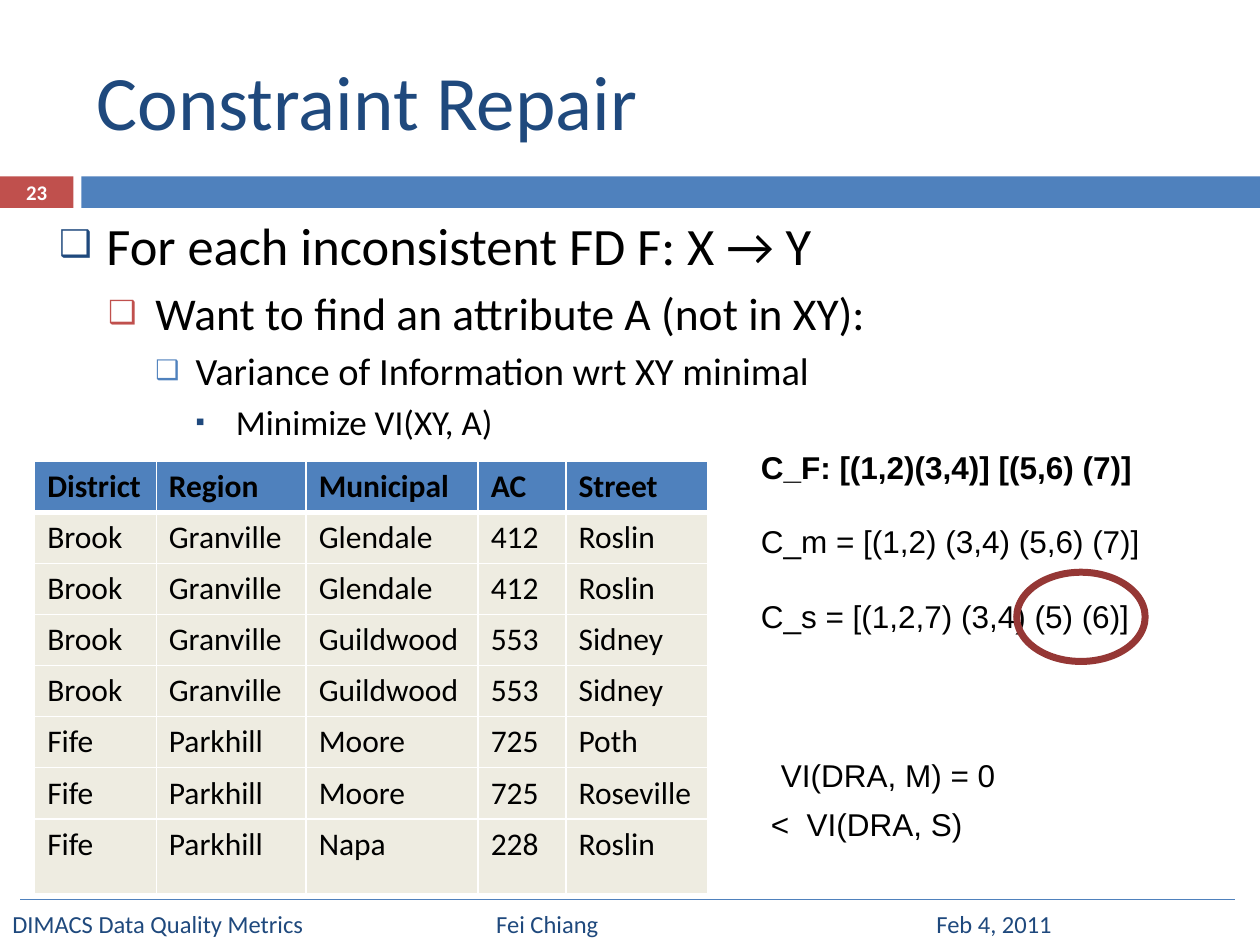
"""Build the Constraint Repair slide."""
import pptx
import pptx.dml.color
import pptx.enum.shapes
import pptx.enum.text
import pptx.oxml
import pptx.oxml.ns
import pptx.util
from lxml import etree

Pt = pptx.util.Pt
SHAPE = pptx.enum.shapes.MSO_SHAPE
ANCHOR = pptx.enum.text.MSO_ANCHOR
ALIGN = pptx.enum.text.PP_ALIGN
COLORS = {
    "navy": "1F497D", "blue": "4F81BD", "red": "C0504D", "dark red": "953735",
    "cream": "EEECE1", "black": "000000", "white": "FFFFFF",
}
BULLETS = [
    ("For each inconsistent FD F: X → Y", 30, 27, 27, "❑", "navy", 70),
    ("Want to find an attribute A (not in XY):", 26, 55, 27, "❑", "red", 70),
    ("Variance of Information wrt XY minimal", 22, 78, 23, "❑", "blue", 70),
    ("Minimize VI(XY, A)", 20, 101, 23, "▪", "navy", 75),
]
ADDRESSES = [
    ("District", "Region", "Municipal", "AC", "Street"),
    ("Brook", "Granville", "Glendale", "412", "Roslin"),
    ("Brook", "Granville", "Glendale", "412", "Roslin"),
    ("Brook", "Granville", "Guildwood", "553", "Sidney"),
    ("Brook", "Granville", "Guildwood", "553", "Sidney"),
    ("Fife", "Parkhill", "Moore", "725", "Poth"),
    ("Fife", "Parkhill", "Moore", "725", "Roseville"),
    ("Fife", "Parkhill", "Napa", "228", "Roslin"),
]
COLUMN_WIDTHS = [69.5, 85.7, 98.3, 50.2, 80.8]
ROW_HEIGHT, LAST_ROW_HEIGHT = 29.2, 43


def rgb(color):
    return pptx.dml.color.RGBColor.from_string(COLORS[color])


def add_element(parent, tag, **attributes):
    values = {name: str(value) for name, value in attributes.items()}
    return etree.SubElement(parent, pptx.oxml.ns.qn(tag), values)


def add_span(para, text, size, color="black", font="Calibri", bold=False):
    span = para.add_run()
    span.text = text
    span.font.name = font
    span.font.size = Pt(size)
    span.font.bold = bold
    span.font.color.rgb = rgb(color)


def place(shape, left, top, width, height):
    shape.left, shape.top = Pt(left), Pt(top)
    shape.width, shape.height = Pt(width), Pt(height)


def add_text(slide, bounds, anchor=ANCHOR.TOP):
    box = slide.shapes.add_textbox(*map(Pt, bounds))
    box.text_frame.word_wrap = True
    box.text_frame.vertical_anchor = anchor
    return box.text_frame.paragraphs[0]


def add_tabs(para, *positions):
    tabs = add_element(para._p.get_or_add_pPr(), "a:tabLst")
    for position in positions:
        add_element(tabs, "a:tab", pos=Pt(position), algn="l")


def add_shape(slide, kind, bounds, fill=None, line=None, width=0):
    shape = slide.shapes.add_shape(kind, *map(Pt, bounds))
    shape.shadow.inherit = False
    if fill:
        shape.fill.solid()
        shape.fill.fore_color.rgb = rgb(fill)
    else:
        shape.fill.background()
    if line:
        shape.line.color.rgb = rgb(line)
        shape.line.width = Pt(width)
    else:
        shape.line.fill.background()


def add_rule(slide, left, right, top):
    rule = slide.shapes.add_connector(
        pptx.enum.shapes.MSO_CONNECTOR.STRAIGHT, Pt(left), Pt(top), Pt(right), Pt(top))
    rule.line.color.rgb = rgb("blue")
    rule.line.width = Pt(0.79)
    add_element(rule._element.spPr, "a:effectLst")


def fill_title(title):
    place(title, 48, 18, 642, 78)
    title.text_frame.vertical_anchor = ANCHOR.MIDDLE
    para = title.text_frame.paragraphs[0]
    para.alignment = ALIGN.LEFT
    add_span(para, "Constraint Repair", 44, "navy")


def fill_bullets(body):
    place(body, 26.6, 118, 648, 174)
    frame = body.text_frame
    frame.auto_size = pptx.enum.text.MSO_AUTO_SIZE.NONE
    for level, (text, size, margin, hanging, mark, color, scale) in enumerate(BULLETS):
        para = frame.add_paragraph() if level else frame.paragraphs[0]
        para.level = level
        para.space_before = Pt(0.2 * size if level else 0)
        properties = para._p.get_or_add_pPr()
        properties.set("marL", str(Pt(margin)))
        properties.set("indent", str(-Pt(hanging)))
        bullet_color = add_element(properties, "a:buClr")
        add_element(bullet_color, "a:srgbClr", val=COLORS[color])
        add_element(properties, "a:buSzPct", val=scale * 1000)
        add_element(properties, "a:buChar", char=mark)
        add_span(para, text, size)


def add_borders(cell, top, bottom):
    properties = cell._tc.get_or_add_tcPr()
    sides = [("a:lnL", 1), ("a:lnR", 1), ("a:lnT", top), ("a:lnB", bottom)]
    for position, (tag, width) in enumerate(sides):
        border = add_element(properties, tag, w=Pt(width))
        fill = add_element(border, "a:solidFill")
        add_element(fill, "a:srgbClr", val=COLORS["white"])
        properties.insert(position, border)


def add_address_table(slide):
    count = len(ADDRESSES)
    height = ROW_HEIGHT * (count - 1) + LAST_ROW_HEIGHT
    table = slide.shapes.add_table(
        count, len(COLUMN_WIDTHS), Pt(19.8), Pt(263.5), Pt(sum(COLUMN_WIDTHS)), Pt(height)).table
    table.horz_banding = False
    for column, width in zip(table.columns, COLUMN_WIDTHS):
        column.width = Pt(width)
    for index, values in enumerate(ADDRESSES):
        table.rows[index].height = Pt(LAST_ROW_HEIGHT if index == count - 1 else ROW_HEIGHT)
        header = index == 0
        for column, value in enumerate(values):
            cell = table.cell(index, column)
            cell.fill.solid()
            cell.fill.fore_color.rgb = rgb("blue" if header else "cream")
            add_borders(cell, 3 if index == 1 else 1, 3 if header else 1)
            add_span(cell.text_frame.paragraphs[0], value, 18, bold=header)


def add_formula(slide, bounds, text, bold=False):
    para = add_text(slide, bounds)
    add_span(para, text, 18, font="Arial", bold=bold)
    return para


def add_clusterings(slide):
    box = slide.shapes.add_textbox(Pt(427.7), Pt(252.7), Pt(260.6), Pt(72.7))
    frame = box.text_frame
    frame.word_wrap = True
    add_span(frame.paragraphs[0], "C_F: [(1,2)(3,4)] [(5,6) (7)]", 18, font="Arial", bold=True)
    para = frame.add_paragraph()
    para.space_before = Pt(20.7)
    add_span(para, "C_m = [(1,2) (3,4) (5,6) (7)]", 18, font="Arial")
    add_formula(slide, (427.7, 337.7, 238.3, 28.8), "C_s = [(1,2,7) (3,4) (5) (6)]")
    add_shape(slide, SHAPE.OVAL, (581, 327, 73.4, 51), line="dark red", width=4)


def add_scores(slide):
    add_formula(slide, (439.2, 428.4, 187.2, 28.8), "VI(DRA, M) = 0")
    comparison = add_formula(slide, (433.4, 456.5, 198.7, 28.8), "<\tVI(DRA, S)")
    add_tabs(comparison, 20.5)


def add_page_frame(slide):
    add_shape(slide, SHAPE.RECTANGLE, (0, 100.8, 42, 18), fill="red")
    add_shape(slide, SHAPE.RECTANGLE, (46.5, 100.8, 673.5, 18), fill="blue")
    add_rule(slide, 11.5, 705.6, 514)
    number = add_text(slide, (0, 100, 42, 19.4), ANCHOR.MIDDLE)
    number.alignment = ALIGN.CENTER
    add_span(number, "23", 11.9, "white", bold=True)
    footer = add_text(slide, (0, 513.4, 720, 28.8), ANCHOR.MIDDLE)
    add_tabs(footer, 276.5, 528)
    add_span(footer, "DIMACS Data Quality Metrics\tFei Chiang\tFeb 4, 2011", 14, "navy")


def main():
    deck = pptx.Presentation()
    deck.slide_width, deck.slide_height = Pt(720), Pt(540)
    slide = deck.slides.add_slide(deck.slide_layouts[1])
    add_page_frame(slide)
    fill_title(slide.shapes.title)
    fill_bullets(slide.placeholders[1])
    add_address_table(slide)
    add_scores(slide)
    add_clusterings(slide)
    deck.save("out.pptx")


if __name__ == "__main__":
    main()
